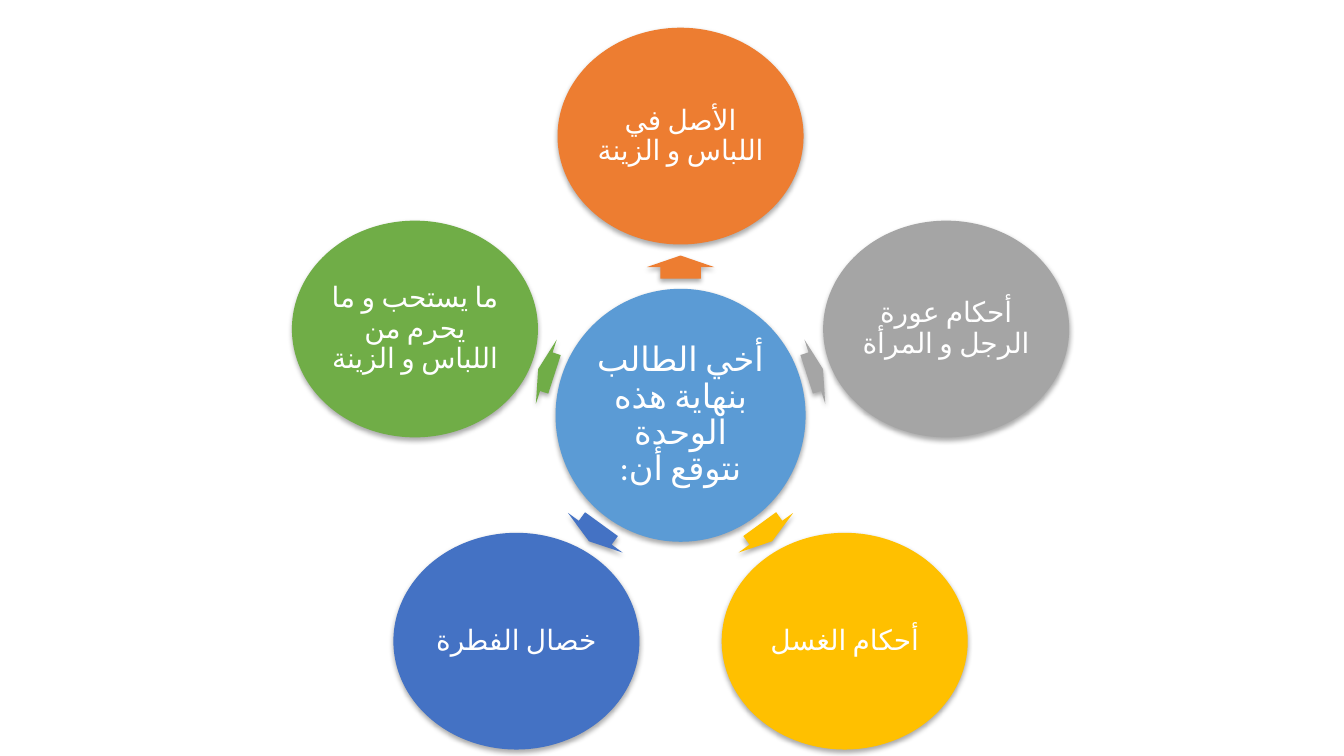
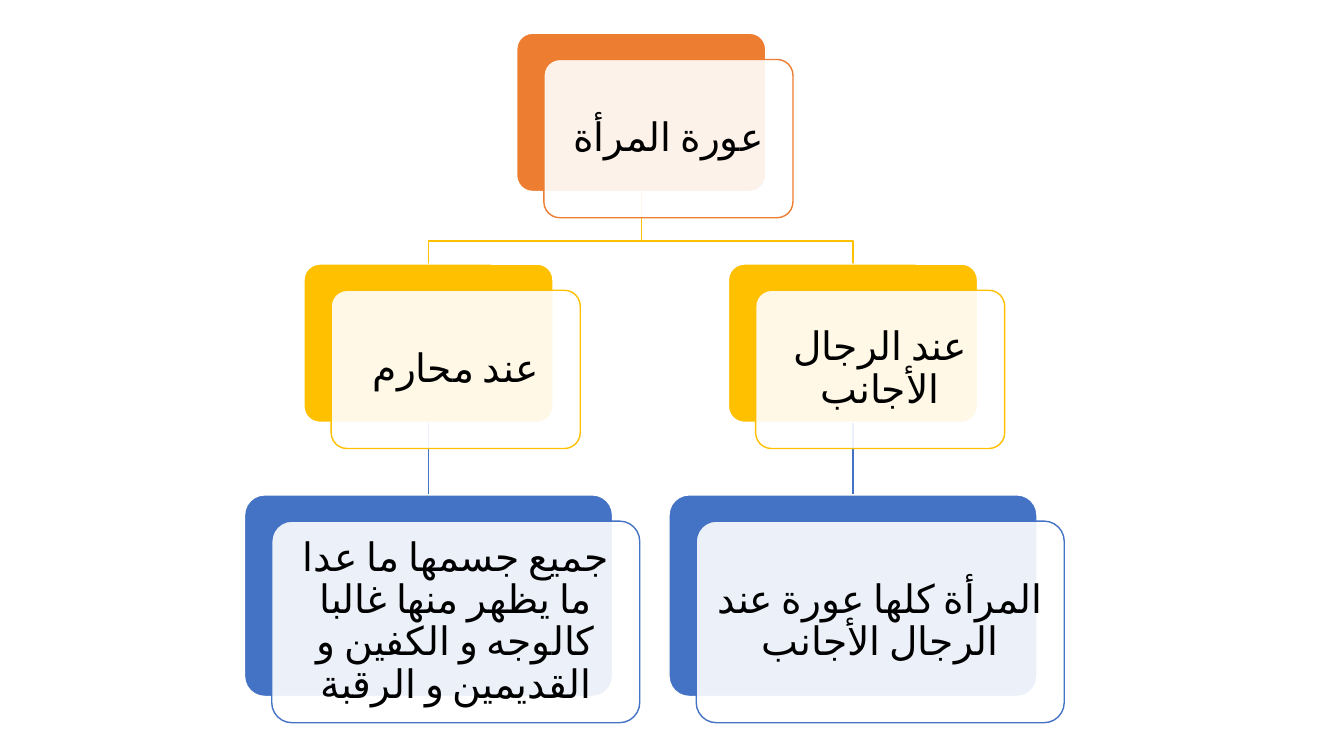
from math import cos, radians, sin

from lxml import etree
from pptx import Presentation
from pptx.dml import color
from pptx.enum import shapes, text
from pptx.oxml import ns, parse_xml
from pptx.util import Inches, Pt


class Theme:
    font, language = "Calibri", "ar-SA"
    white, black = "FFFFFF", "000000"
    hub, orange, gray = "5B9BD5", "ED7D31", "A5A5A5"
    gold, blue, green = "FFC000", "4472C4", "70AD47"
    hub_size, topic_size, node_size = 24, 20, 28
    line = 1
    veil = 90


HUB = "أخي الطالب بنهاية هذه الوحدة نتوقع أن:"
TOPICS = [
    ("الأصل في اللباس و الزينة", Theme.orange, 0.23, 1.47),
    ("أحكام عورة الرجل و المرأة", Theme.gray, 0.17, 1.4),
    ("أحكام الغسل", Theme.gold, 0.21, 1.44),
    ("خصال الفطرة", Theme.blue, 0.21, 1.44),
    ("ما يستحب و ما يحرم من اللباس و الزينة", Theme.green, 0.17, 1.4),
]
HUB_CENTER, ORBIT = (6.75, 4.12), 2.77
HUB_BOX, TOPIC_BOX, ARROW_WIDTH = (2.48, 2.51), (2.44, 2.15), 0.67

ROOT = "عورة المرأة"
BRANCHES = [
    (4.25, "عند محارم",
     "جميع جسمها ما عدا ما يظهر منها غالبا كالوجه و الكفين و القديمين و الرقبة"),
    (8.46, "عند الرجال الأجانب", "المرأة كلها عورة عند الرجال الأجانب"),
]
ROOT_X, TOP, ROW_STEP, BEND = 6.36, 0.33, 2.29, 2.39
NODE_BOX, LEAF_BOX, CARD_SHIFT = (2.47, 1.57), (3.65, 2), (0.27, 0.26)

SHADOW = (
    f'<a:effectLst {ns.nsdecls("a")}><a:outerShdw blurRad="{Pt(3.5)}" dist="{Pt(2.2)}" '
    'dir="5400000" rotWithShape="0"><a:srgbClr val="000000"><a:alpha val="32000"/>'
    '</a:srgbClr></a:outerShdw></a:effectLst>'
)


def rgb(value):
    return color.RGBColor.from_string(value)


def apply(target, formats):
    for name, value in formats.items():
        setattr(target, name, value)


def add_centered(slide, kind, center, box, fill, outline=None):
    left, top = (c - size / 2 for c, size in zip(center, box))
    shape = slide.shapes.add_shape(
        kind, Inches(left), Inches(top), Inches(box[0]), Inches(box[1]))
    shape.shadow.inherit = False
    shape.fill.solid()
    shape.fill.fore_color.rgb = rgb(fill)
    if outline:
        style_line(shape, outline)
    else:
        shape.line.fill.background()
    return shape


def style_line(shape, outline):
    shape.line.color.rgb = rgb(outline)
    shape.line.width = Pt(Theme.line)


def write(shape, words, size, ink, inset):
    frame = shape.text_frame
    margins = {f"margin_{side}": Inches(inset) for side in ("left", "top", "right", "bottom")}
    apply(frame, {"word_wrap": True, "vertical_anchor": text.MSO_ANCHOR.MIDDLE, **margins})
    paragraph = frame.paragraphs[0]
    apply(paragraph, {"alignment": text.PP_ALIGN.CENTER, "line_spacing": 0.9})
    paragraph._p.get_or_add_pPr().set("rtl", "1")
    run = paragraph.add_run()
    run.text = words
    apply(run.font, {"name": Theme.font, "size": Pt(size)})
    run.font.color.rgb = rgb(ink)
    properties = run._r.get_or_add_rPr()
    properties.set("lang", Theme.language)
    etree.SubElement(properties, ns.qn("a:cs"), typeface=Theme.font)


def cast_shadow(shape):
    properties = shape._element.spPr
    properties.replace(properties.find(ns.qn("a:effectLst")), parse_xml(SHADOW))


def add_disc(slide, center, box, fill, words, size):
    disc = add_centered(slide, shapes.MSO_SHAPE.OVAL, center, box, fill)
    cast_shadow(disc)
    write(disc, words, size, Theme.white, 0.03)


def build_wheel(slide):
    add_disc(slide, HUB_CENTER, HUB_BOX, Theme.hub, HUB, Theme.hub_size)
    for index, (words, fill, length, distance) in enumerate(TOPICS):
        angle = 270 + index * 360 / len(TOPICS)

        def on_ring(radius):
            turn = radians(angle)
            return HUB_CENTER[0] + radius * cos(turn), HUB_CENTER[1] + radius * sin(turn)

        arrow = add_centered(slide, shapes.MSO_SHAPE.RIGHT_ARROW, on_ring(distance),
                             (length, ARROW_WIDTH), fill)
        arrow.adjustments[0] = 0.6
        arrow.rotation = angle % 360
        cast_shadow(arrow)
        add_disc(slide, on_ring(ORBIT), TOPIC_BOX, fill, words, Theme.topic_size)


def add_node(slide, x, row, box, accent, words):
    y = TOP + row * ROW_STEP + box[1] / 2
    card_center = (x + CARD_SHIFT[0], y + CARD_SHIFT[1])
    layers = [((x, y), accent, Theme.white), (card_center, Theme.white, accent)]
    for center, fill, outline in layers:
        card = add_centered(slide, shapes.MSO_SHAPE.ROUNDED_RECTANGLE, center, box, fill, outline)
        card.adjustments[0] = 0.1
    solid = card._element.spPr.find(ns.qn("a:solidFill"))
    etree.SubElement(solid[0], ns.qn("a:alpha"), val=str(Theme.veil * 1000))
    write(card, words, Theme.node_size, Theme.black, 0.12)


def add_elbow(slide, points, outline):
    corners = [(Inches(x), Inches(y)) for x, y in points]
    builder = slide.shapes.build_freeform(*corners[0])
    builder.add_line_segments(corners[1:], close=False)
    elbow = builder.convert_to_shape()
    elbow.shadow.inherit = False
    elbow.fill.background()
    style_line(elbow, outline)


def add_drop(slide, x, start, end, outline):
    drop = slide.shapes.add_connector(
        shapes.MSO_CONNECTOR.STRAIGHT, Inches(x), Inches(start), Inches(x), Inches(end))
    style_line(drop, outline)
    etree.SubElement(drop._element.spPr, ns.qn("a:effectLst"))


def build_tree(slide):
    root_bottom = TOP + NODE_BOX[1]
    branch_top, leaf_top = TOP + ROW_STEP, TOP + 2 * ROW_STEP
    for x, _, _ in BRANCHES:
        add_drop(slide, x, branch_top + NODE_BOX[1], leaf_top, Theme.blue)
        add_elbow(slide, [(ROOT_X, root_bottom), (ROOT_X, BEND), (x, BEND), (x, branch_top)],
                  Theme.gold)
    add_node(slide, ROOT_X, 0, NODE_BOX, Theme.orange, ROOT)
    for x, branch, leaf in BRANCHES:
        add_node(slide, x, 1, NODE_BOX, Theme.gold, branch)
        add_node(slide, x, 2, LEAF_BOX, Theme.blue, leaf)


def main():
    deck = Presentation()
    apply(deck, {"slide_width": Inches(13.33), "slide_height": Inches(7.5)})
    for build in (build_wheel, build_tree):
        build(deck.slides.add_slide(deck.slide_layouts[6]))
    deck.save("out.pptx")


if __name__ == "__main__":
    main()
